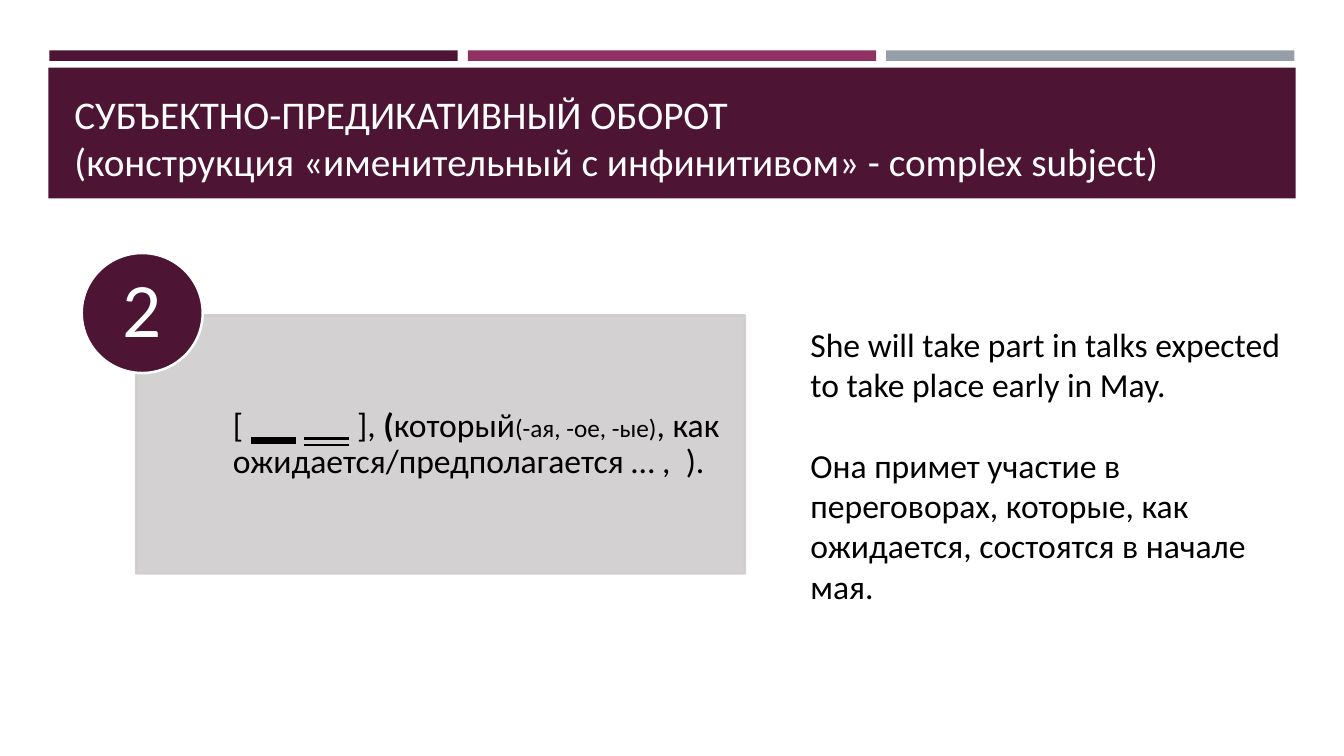
from lxml import etree
from pptx import Presentation
from pptx.dml.color import RGBColor
from pptx.enum.shapes import MSO_SHAPE
from pptx.enum.text import MSO_ANCHOR, MSO_UNDERLINE, PP_ALIGN
from pptx.oxml.ns import qn
from pptx.util import Inches, Pt

RECT, OVAL = MSO_SHAPE.RECTANGLE, MSO_SHAPE.OVAL
TOP, MIDDLE, BOTTOM = MSO_ANCHOR.TOP, MSO_ANCHOR.MIDDLE, MSO_ANCHOR.BOTTOM
LEFT, CENTER = PP_ALIGN.LEFT, PP_ALIGN.CENTER
HEAVY, DOUBLE = MSO_UNDERLINE.HEAVY_LINE, MSO_UNDERLINE.DOUBLE_LINE
WIDE, HIGH = Inches(13.33), Inches(7.5)
COLORS = {"plum": "4D1434", "berry": "903163", "steel": "969FA7",
          "card": "D0CCCE", "white": "FFFFFF", "black": "000000"}


def color(name):
    """Return the named colour."""
    return RGBColor.from_string(COLORS[name])


def place(left, top, width, height):
    """Turn percentages of the slide into lengths."""
    return [int(share * side / 100) for share, side in
            zip((left, top, width, height), (WIDE, HIGH, WIDE, HIGH))]


def add_form(slide, kind, area, fill, line=None, alpha=None):
    """Draw a filled shape, with an outline and opacity if given."""
    form = slide.shapes.add_shape(kind, *place(*area))
    form.shadow.inherit = False
    form.fill.solid()
    form.fill.fore_color.rgb = color(fill)
    if line:
        form.line.color.rgb = color(line)
        form.line.width = Pt(1.75)
    else:
        form.line.fill.background()
    if alpha:
        for tint in form._element.spPr.iter(qn("a:srgbClr")):
            etree.SubElement(tint, qn("a:alpha")).set("val", str(alpha * 1000))


def add_text(slide, area, paras, size=24, ink="black", anchor=TOP, align=LEFT,
             inset=(0.1, 0.05, 0.1, 0.05), pitch=1, after=0):
    """Write paragraphs made of (text, format) runs."""
    frame = slide.shapes.add_textbox(*place(*area)).text_frame
    frame.word_wrap = True
    frame.vertical_anchor = anchor
    (frame.margin_left, frame.margin_top,
     frame.margin_right, frame.margin_bottom) = map(Inches, inset)
    for index, runs in enumerate(paras):
        para = frame.paragraphs[0] if index == 0 else frame.add_paragraph()
        para.alignment = align
        para.line_spacing = pitch
        para.space_after = Pt(after if index < len(paras) - 1 else 0)
        for text, style in runs:
            run = para.add_run()
            run.text = text
            font = run.font
            font.name = "Calibri"
            font.size = Pt(style.get("size", size))
            font.bold = style.get("bold", False)
            font.underline = style.get("under", False)
            font.color.rgb = color(ink)


def add_head(slide):
    """Draw the three bars and the title band."""
    for step, fill in enumerate(("plum", "berry", "steel")):
        add_form(slide, RECT, (3.68 + step * 31.13, 6.67, 30.38, 1.4), fill)
    add_form(slide, RECT, (3.6, 8.93, 92.8, 17.33), "plum")
    add_text(slide, (4.8, 10.27, 90.47, 14.8), [
        [("СУБЪЕКТНО-ПРЕДИКАТИВНЫЙ ОБОРОТ", {})],
        [("(конструкция «именительный с инфинитивом» - complex subject)", {})],
    ], size=28, ink="white", anchor=BOTTOM)


def add_rule(slide):
    """Draw the numbered card with the sentence pattern."""
    blank = " " * 6
    add_form(slide, RECT, (10.13, 41.73, 45.3, 34.13), "card", "card", 90)
    add_text(slide, (17.33, 41.73, 38.03, 34.13), [[
        ("[ ", {}), (blank, {"under": HEAVY}), (" ", {}),
        (blank, {"under": DOUBLE}), (" ], ", {}), ("(", {"bold": True}),
        ("который", {}), ("(-ая, -ое, -ые)", {"size": 18}),
        (", как ожидается/предполагается … ,  ).", {}),
    ]], anchor=MIDDLE, inset=(0, 0.19, 0.19, 0.19), pitch=0.9)
    add_form(slide, OVAL, (6.08, 33.47, 9, 15.87), "plum", "white")
    add_text(slide, (7.35, 35.73, 6.38, 11.2), [[("2", {})]], size=55,
             ink="white", anchor=MIDDLE, align=CENTER, inset=(0, 0, 0, 0),
             pitch=0.9)


def main():
    """Build and save the slide."""
    deck = Presentation()
    deck.slide_width, deck.slide_height = WIDE, HIGH
    slide = deck.slides.add_slide(deck.slide_layouts[6])
    add_head(slide)
    add_rule(slide)
    add_text(slide, (59.56, 42.13, 37.5, 39.07), [
        [("She will take part in talks expected to take place early in May.",
          {})],
        [("Она примет участие в переговорах, которые, как ожидается, "
          "состоятся в начале мая.", {})],
    ], after=29)
    deck.save("out.pptx")


if __name__ == "__main__":
    main()
